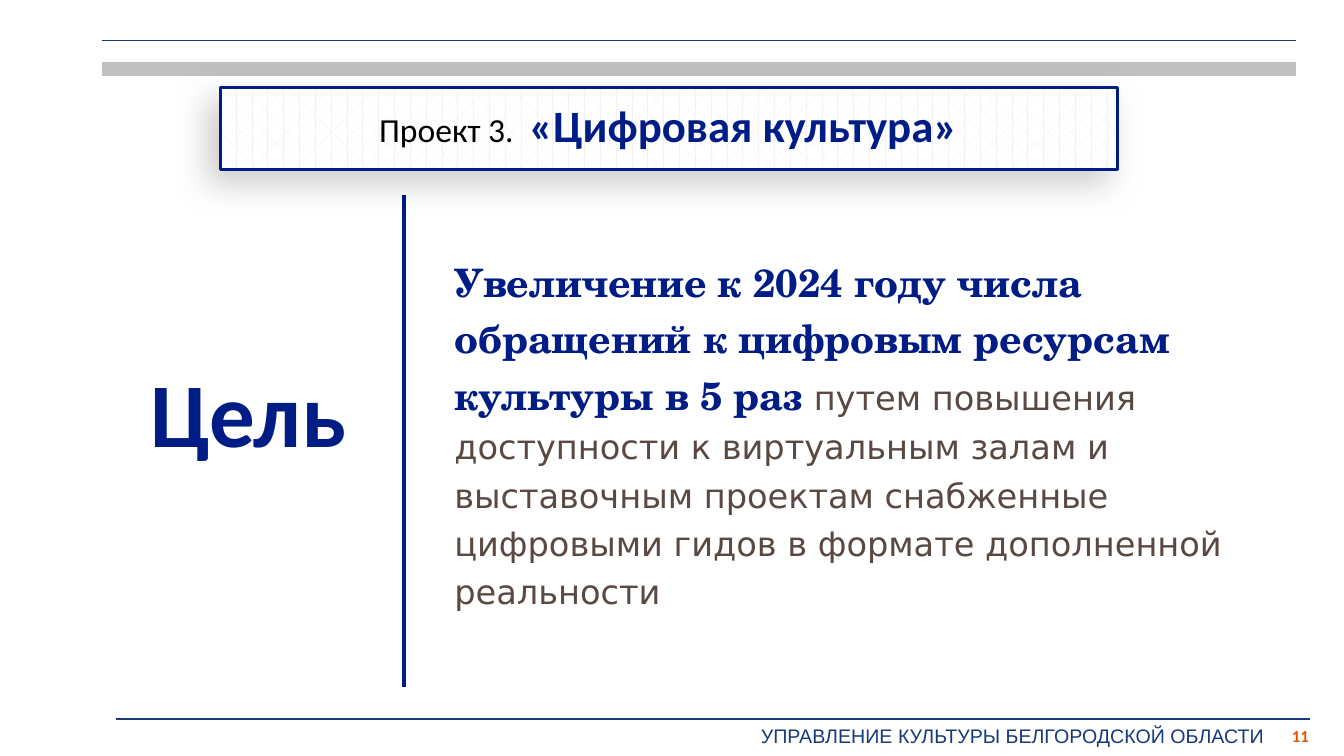
from dataclasses import dataclass

import lxml.etree
import pptx
import pptx.dml.color
import pptx.enum.dml
import pptx.enum.shapes
import pptx.enum.text
import pptx.oxml.ns
import pptx.util

SLIDE_WIDTH = pptx.util.Inches(13.333)
SLIDE_HEIGHT = pptx.util.Inches(7.5)
COLUMNS, ROWS = 160, 90

NAVY, STEEL, GREY = "001C85", "18397A", "BFBFBF"
BROWN, ORANGE, BLACK = "5A4942", "DE5A00", "000000"
WHITE, PALE = "FFFFFF", "F2F2F2"

ALIGN = pptx.enum.text.PP_ALIGN
ANCHOR = pptx.enum.text.MSO_ANCHOR


@dataclass(frozen=True)
class Area:
    """A rectangle in grid columns and rows."""
    column: float
    row: float
    columns: float
    rows: float


@dataclass(frozen=True)
class Rule:
    """A straight line between two grid points."""
    column: float
    row: float
    end_column: float
    end_row: float
    colour: str
    weight: float


@dataclass(frozen=True)
class Run:
    text: str
    size: float
    font: str
    colour: str
    bold: bool = False


RULES = [
    Rule(12.1, 4.8, 154.3, 4.8, STEEL, 1),
    Rule(12.1, 8.2, 154.3, 8.2, GREY, 10),
    Rule(13.8, 85.6, 156, 85.6, STEEL, 1),
    Rule(48.1, 23.2, 48.1, 81.8, NAVY, 2.25),
]


def across(columns: float) -> int:
    return round(SLIDE_WIDTH * columns / COLUMNS)


def down(rows: float) -> int:
    return round(SLIDE_HEIGHT * rows / ROWS)


def bounds(area: Area) -> tuple[int, int, int, int]:
    return across(area.column), down(area.row), across(area.columns), down(area.rows)


def rgb(colour: str) -> pptx.dml.color.RGBColor:
    return pptx.dml.color.RGBColor.from_string(colour)


def draw_rule(slide, rule: Rule) -> None:
    connector = slide.shapes.add_connector(
        pptx.enum.shapes.MSO_CONNECTOR.STRAIGHT,
        across(rule.column), down(rule.row), across(rule.end_column), down(rule.end_row))
    connector.line.color.rgb = rgb(rule.colour)
    connector.line.width = pptx.util.Pt(rule.weight)
    lxml.etree.SubElement(connector._element.spPr, pptx.oxml.ns.qn("a:effectLst"))


def write_text(shape, runs: list[Run], *, align=ALIGN.LEFT, anchor=ANCHOR.TOP,
               spacing: float = 1.0, wrap: bool = True) -> None:
    frame = shape.text_frame
    frame.word_wrap = wrap
    frame.vertical_anchor = anchor
    paragraph = frame.paragraphs[0]
    paragraph.alignment = align
    paragraph.line_spacing = spacing
    for item in runs:
        run = paragraph.add_run()
        run.text = item.text
        run.font.size = pptx.util.Pt(item.size)
        run.font.name = item.font
        run.font.bold = item.bold
        run.font.color.rgb = rgb(item.colour)


def add_text(slide, area: Area, runs: list[Run], **text_format) -> None:
    write_text(slide.shapes.add_textbox(*bounds(area)), runs, **text_format)


def add_soft_shadow(shape, colour: str, opacity: int, blur: float,
                    distance: float, degrees: int) -> None:
    """Give the shape a blurred outer shadow; blur and distance are in points."""
    shape.shadow.inherit = False
    qn = pptx.oxml.ns.qn
    effects = shape._element.spPr.find(qn("a:effectLst"))
    shadow = lxml.etree.SubElement(
        effects, qn("a:outerShdw"), blurRad=str(pptx.util.Pt(blur)),
        dist=str(pptx.util.Pt(distance)), dir=str(degrees * 60000), rotWithShape="0")
    tint = lxml.etree.SubElement(shadow, qn("a:srgbClr"), val=colour)
    lxml.etree.SubElement(tint, qn("a:alpha"), val=str(opacity * 1000))


def add_project_banner(slide, area: Area, runs: list[Run]) -> None:
    banner = slide.shapes.add_shape(pptx.enum.shapes.MSO_SHAPE.RECTANGLE, *bounds(area))
    banner.fill.patterned()
    banner.fill.pattern = pptx.enum.dml.MSO_PATTERN.DIVOT
    banner.fill.fore_color.rgb = rgb(PALE)
    banner.fill.back_color.rgb = rgb(WHITE)
    banner.line.color.rgb = rgb(NAVY)
    banner.line.width = pptx.util.Pt(2.25)
    add_soft_shadow(banner, BLACK, opacity=20, blur=24, distance=12, degrees=135)
    frame = banner.text_frame
    frame.margin_left = frame.margin_right = pptx.util.Inches(0.13)
    frame.margin_top = frame.margin_bottom = pptx.util.Inches(0.13)
    write_text(banner, runs, align=ALIGN.CENTER, anchor=ANCHOR.MIDDLE, spacing=0.9)


def main() -> None:
    presentation = pptx.Presentation()
    presentation.slide_width = SLIDE_WIDTH
    presentation.slide_height = SLIDE_HEIGHT
    slide = presentation.slides.add_slide(presentation.slide_layouts[6])

    for rule in RULES:
        draw_rule(slide, rule)

    add_text(slide, Area(89.4, 85.6, 62.9, 4.1),
             [Run("УПРАВЛЕНИЕ КУЛЬТУРЫ БЕЛГОРОДСКОЙ ОБЛАСТИ", 14, "Arial", STEEL)],
             wrap=False)
    add_text(slide, Area(152.3, 85.2, 4.7, 4.8),
             [Run("11", 12, "Calibri", ORANGE, bold=True)],
             align=ALIGN.RIGHT, anchor=ANCHOR.MIDDLE)

    add_project_banner(slide, Area(26.2, 10.4, 106.8, 9.8), [
        Run("Проект 3.  ", 24, "Calibri", BLACK),
        Run("«Цифровая культура»", 32, "Calibri", NAVY, bold=True),
    ])

    add_text(slide, Area(16.7, 41.8, 26, 14.3),
             [Run("Цель", 65, "Calibri", NAVY, bold=True)], wrap=False)
    add_text(slide, Area(52.9, 29, 97.3, 39), [
        Run("Увеличение", 28, "TeX Gyre Schola", NAVY, bold=True),
        Run(" ", 24, "DejaVu Sans", BROWN),
        Run("к 2024 году числа обращений к цифровым ресурсам культуры в 5 раз",
            28, "TeX Gyre Schola", NAVY, bold=True),
        Run(" путем повышения доступности к виртуальным залам и выставочным проектам "
            "снабженные цифровыми гидов в формате дополненной реальности",
            24, "DejaVu Sans", BROWN),
    ], spacing=1.2)

    presentation.save("out.pptx")


if __name__ == "__main__":
    main()
